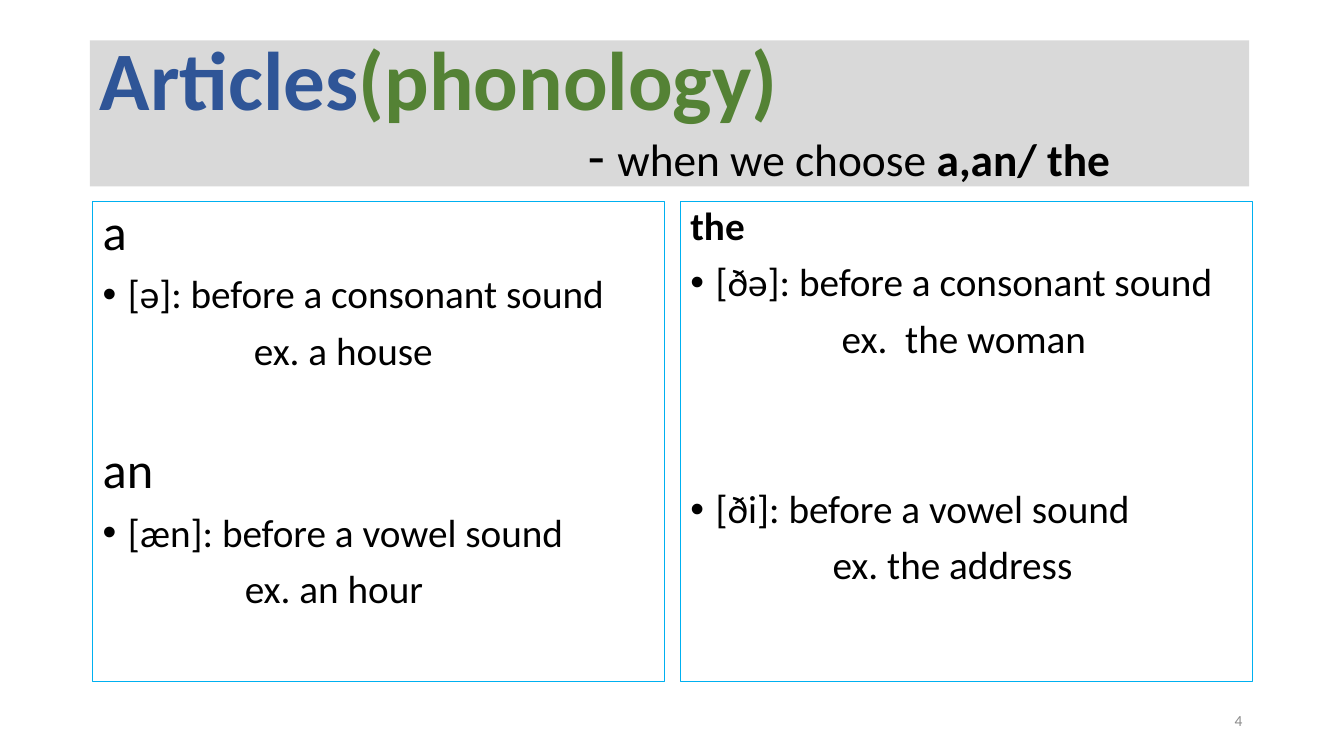
from lxml.etree import SubElement
from pptx import Presentation
from pptx.dml.color import RGBColor
from pptx.enum.text import MSO_ANCHOR, MSO_AUTO_SIZE, PP_ALIGN
from pptx.oxml.ns import qn
from pptx.util import Inches, Pt

BLACK = RGBColor(0x00, 0x00, 0x00)
BLUE = RGBColor(0x2F, 0x55, 0x97)
GREEN = RGBColor(0x54, 0x82, 0x35)
BAND_GRAY = RGBColor(0xD9, 0xD9, 0xD9)
NUMBER_GRAY = RGBColor(0x8C, 0x8C, 0x8C)
PANEL_BLUE = RGBColor(0x00, 0xB0, 0xF0)
FONT = "Calibri"

# Title lines: left indent in inches, then runs of (text, size, bold, color)
TITLE_LINES = [
    (0, [("Articles", 59.4, True, BLUE), ("(phonology)", 59.4, True, GREEN)]),
    (4.84, [("- ", 39.6, False, BLACK), ("when we choose ", 32.4, False, BLACK),
            ("a,an/ the", 32.4, True, BLACK)]),
]

# Panel lines: (kind, text, size, bold, empty rows above)
PANELS = [
    [("head", "a", 36, False, 0),
     ("bullet", "[ə]: before a consonant sound", 28, False, 0),
     ("consonant example", "ex. a house", 28, False, 0),
     ("head", "an", 36, False, 1),
     ("bullet", "[æn]: before a vowel sound", 28, False, 0),
     ("vowel example", "ex. an hour", 28, False, 0)],
    [("head", "the", 28, True, 0),
     ("bullet", "[ðə]: before a consonant sound", 28, False, 0),
     ("consonant example", "ex.  the woman", 28, False, 0),
     ("bullet", "[ði]: before a vowel sound", 28, False, 2),
     ("vowel example", "ex. the address", 28, False, 0)],
]
INDENTS = {"head": 0, "bullet": 0.25, "consonant example": 1.5, "vowel example": 1.41}

# Panel grid in inches, paragraph rhythm in points
PANEL_LEFT, PANEL_TOP = 0.92, 2
PANEL_WIDTH, PANEL_HEIGHT, PANEL_GAP = 5.67, 4.76, 0.16
LINE_SPACING, SPACE_BEFORE, ROW_HEIGHT = 0.9, 10, 40.75


def set_font(font, size, bold, color):
    font.name, font.size, font.bold = FONT, Pt(size), bold
    font.color.rgb = color


def indent(paragraph, left, bullet=False):
    properties = paragraph._p.get_or_add_pPr()
    properties.set("marL", str(Inches(left)))
    properties.set("indent", str(-Inches(left) if bullet else 0))
    if bullet:
        SubElement(properties, qn("a:buFont"), typeface="Arial")
        SubElement(properties, qn("a:buChar"), char="•")


def next_paragraph(frame, index):
    return frame.add_paragraph() if index else frame.paragraphs[0]


presentation = Presentation()
presentation.slide_width, presentation.slide_height = Inches(13.33), Inches(7.5)
slide = presentation.slides.add_slide(presentation.slide_layouts[5])

# Title band
title = slide.shapes.title
title.left, title.top = Inches(0.89), Inches(0.4)
title.width, title.height = Inches(11.5), Inches(1.45)
title.fill.solid()
title.fill.fore_color.rgb = BAND_GRAY
frame = title.text_frame
frame.auto_size = MSO_AUTO_SIZE.NONE
frame.vertical_anchor = MSO_ANCHOR.MIDDLE
for index, (left, runs) in enumerate(TITLE_LINES):
    paragraph = next_paragraph(frame, index)
    paragraph.alignment = PP_ALIGN.LEFT
    paragraph.line_spacing = LINE_SPACING
    paragraph.space_before = Pt(0)
    indent(paragraph, left)
    for text, size, bold, color in runs:
        run = paragraph.add_run()
        run.text = text
        set_font(run.font, size, bold, color)

# Two article panels
for column, lines in enumerate(PANELS):
    left = PANEL_LEFT + column * (PANEL_WIDTH + PANEL_GAP)
    panel = slide.shapes.add_textbox(Inches(left), Inches(PANEL_TOP),
                                     Inches(PANEL_WIDTH), Inches(PANEL_HEIGHT))
    panel.line.color.rgb = PANEL_BLUE
    panel.line.width = Pt(0.75)
    panel.text_frame.word_wrap = True
    for index, (kind, text, size, bold, empty_rows) in enumerate(lines):
        paragraph = next_paragraph(panel.text_frame, index)
        paragraph.text = text
        paragraph.line_spacing = LINE_SPACING
        paragraph.space_before = Pt(SPACE_BEFORE + empty_rows * ROW_HEIGHT)
        indent(paragraph, INDENTS[kind], kind == "bullet")
        set_font(paragraph.font, size, bold, BLACK)

# Slide number
number = slide.shapes.add_textbox(Inches(9.42), Inches(6.95), Inches(3), Inches(0.4))
number.text_frame.word_wrap = True
number.text_frame.vertical_anchor = MSO_ANCHOR.MIDDLE
paragraph = number.text_frame.paragraphs[0]
paragraph.text = "4"
paragraph.alignment = PP_ALIGN.RIGHT
set_font(paragraph.font, 11, False, NUMBER_GRAY)

presentation.save("out.pptx")
